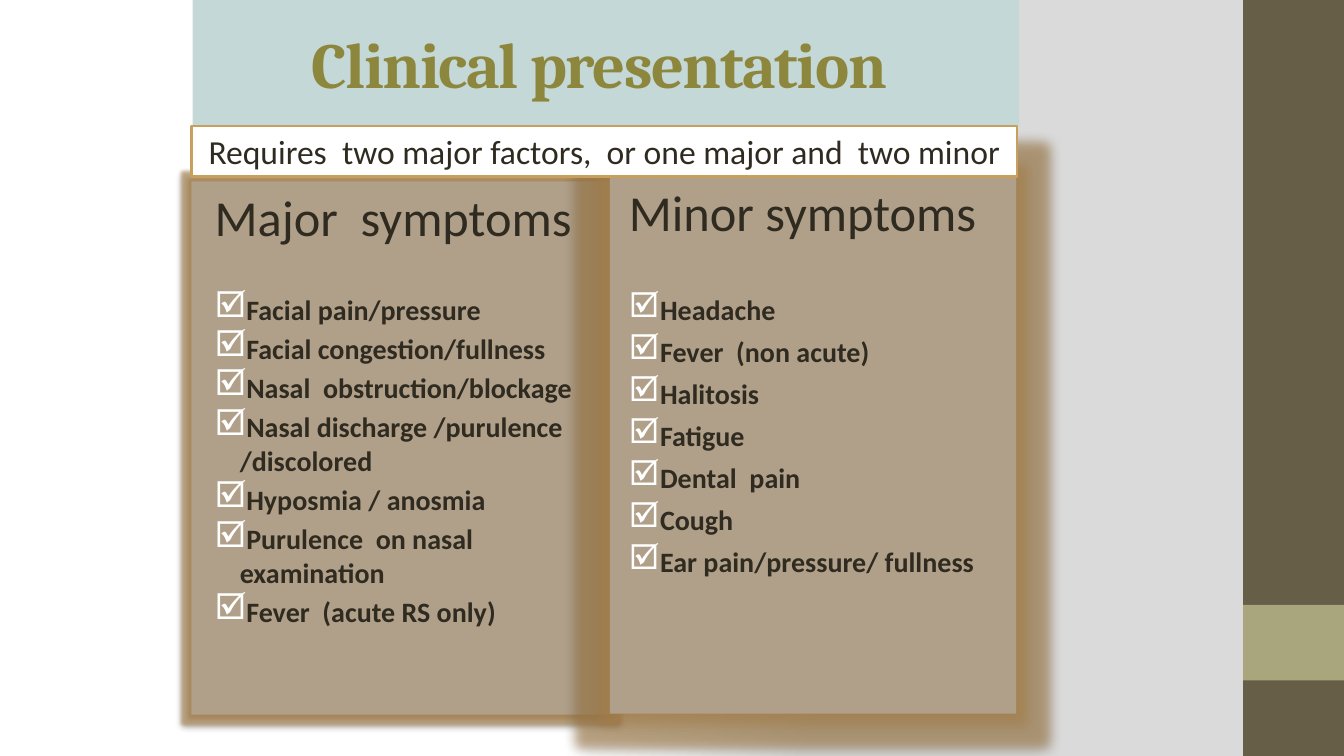
from dataclasses import dataclass

from lxml.etree import SubElement
from pptx import Presentation
from pptx.dml.color import RGBColor
from pptx.enum.shapes import MSO_SHAPE
from pptx.enum.text import MSO_ANCHOR, PP_ALIGN
from pptx.oxml import parse_xml
from pptx.oxml.ns import nsdecls, qn
from pptx.util import Pt


@dataclass(frozen=True)
class Theme:
    heading_font: str = "Cambria"
    body_font: str = "Calibri"
    title_size: int = 46
    panel_title_size: int = 36
    rule_size: int = 24
    item_size: int = 20
    title: str = "8D873E"
    text: str = "2F2B20"
    title_band: str = "C4D8D7"
    panel: str = "B1A089"
    rule_line: str = "C89F5D"
    glow: str = "A6804A"
    sidebar: str = "675E47"
    sidebar_accent: str = "A9A57C"
    white: str = "FFFFFF"
    backdrop: str = "DADADA"
    shadow: str = "000000"


THEME = Theme()
MAJOR = [
    "Facial pain/pressure",
    "Facial congestion/fullness",
    "Nasal  obstruction/blockage",
    "Nasal discharge /purulence /discolored",
    "Hyposmia / anosmia",
    "Purulence  on nasal  examination",
    "Fever  (acute RS only)",
]
MINOR = [
    "Headache",
    "Fever  (non acute)",
    "Halitosis",
    "Fatigue",
    "Dental  pain",
    "Cough",
    "Ear pain/pressure/ fullness",
]


def rgb(code):
    return RGBColor.from_string(code)


def style(paragraph, font_name, size, color, bold=False):
    font = paragraph.runs[0].font
    font.name, font.size, font.bold = font_name, Pt(size), bold
    font.color.rgb = rgb(color)


def set_background(slide):
    fill = slide.background.fill
    fill.solid()
    stops = [(0, THEME.white), (75, THEME.white), (100, THEME.backdrop)]
    stop_xml = "".join(
        f'<a:gs pos="{position * 1000}"><a:srgbClr val="{color}"/></a:gs>'
        for position, color in stops
    )
    gradient = parse_xml(
        f'<a:gradFill {nsdecls("a")} rotWithShape="1"><a:gsLst>{stop_xml}</a:gsLst>'
        '<a:path path="circle"><a:fillToRect l="20000" t="50000" r="100000" b="50000"/>'
        "</a:path></a:gradFill>"
    )
    solid = next(slide.element.iter(qn("a:solidFill")))
    solid.getparent().replace(solid, gradient)


def add_block(slide, left, top, width, height, color):
    block = slide.shapes.add_shape(
        MSO_SHAPE.RECTANGLE, Pt(left), Pt(top), Pt(width), Pt(height)
    )
    block.shadow.inherit = False
    block.fill.solid()
    block.fill.fore_color.rgb = rgb(color)
    block.line.fill.background()
    return block


def add_halo(panel, radius):
    effects = panel.element.spPr.find(qn("a:effectLst"))
    glow = SubElement(effects, qn("a:glow"), rad=str(Pt(radius)))
    shadow = SubElement(
        effects, qn("a:outerShdw"), blurRad=str(Pt(3.5)), dist=str(Pt(2.2)),
        dir="5400000", rotWithShape="0",
    )
    for effect, color, alpha in [(glow, THEME.glow, 60), (shadow, THEME.shadow, 32)]:
        shade = SubElement(effect, qn("a:srgbClr"), val=color)
        SubElement(shade, qn("a:alpha"), val=str(alpha * 1000))


def set_indent(paragraph, margin, indent):
    properties = paragraph._p.get_or_add_pPr()
    properties.set("marL", str(Pt(margin)))
    properties.set("indent", str(Pt(indent)))
    return properties


def add_checkbox(properties, percent):
    color = SubElement(properties, qn("a:buClr"))
    SubElement(color, qn("a:srgbClr"), val=THEME.white)
    SubElement(properties, qn("a:buSzPct"), val=str(percent * 1000))
    SubElement(properties, qn("a:buChar"), char="☑")


def add_title(slide, text):
    title = slide.shapes.title
    title.left, title.top, title.width, title.height = Pt(137.5), Pt(0), Pt(590.4), Pt(90)
    title.fill.solid()
    title.fill.fore_color.rgb = rgb(THEME.title_band)
    title.text_frame.text = text
    title.text_frame.vertical_anchor = MSO_ANCHOR.MIDDLE
    paragraph = title.text_frame.paragraphs[0]
    paragraph.alignment = PP_ALIGN.CENTER
    style(paragraph, THEME.heading_font, THEME.title_size, THEME.title, bold=True)
    paragraph.runs[0].font._element.set("spc", "-100")


def add_symptoms(slide, box, heading, symptoms, hanging, gap, checkbox, halo):
    panel = add_block(slide, *box, THEME.panel)
    add_halo(panel, halo)
    frame = panel.text_frame
    frame.word_wrap = True
    frame.vertical_anchor = MSO_ANCHOR.TOP
    frame.text = "\n".join([heading, *symptoms])
    title, *items = frame.paragraphs
    title.alignment = PP_ALIGN.LEFT
    set_indent(title, *hanging)
    style(title, THEME.body_font, THEME.panel_title_size, THEME.text)
    for item in items:
        item.alignment = PP_ALIGN.LEFT
        properties = set_indent(item, *hanging)
        item.space_before = Pt(gap)
        add_checkbox(properties, checkbox)
        style(item, THEME.body_font, THEME.item_size, THEME.text, bold=True)
    items[0].space_before = Pt(2 * gap + 1.22 * THEME.item_size)


def add_rule(slide, text):
    rule = add_block(slide, 136.8, 90, 589.7, 36, THEME.white)
    rule.line.color.rgb = rgb(THEME.rule_line)
    rule.line.width = Pt(2)
    rule.text_frame.word_wrap = True
    rule.text_frame.text = text
    paragraph = rule.text_frame.paragraphs[0]
    paragraph.alignment = PP_ALIGN.CENTER
    style(paragraph, THEME.body_font, THEME.rule_size, THEME.text)


def main():
    deck = Presentation()
    deck.slide_width, deck.slide_height = Pt(960), Pt(540)
    slide = deck.slides.add_slide(deck.slide_layouts[5])
    set_background(slide)
    add_block(slide, 888, 0, 72, 540, THEME.sidebar)
    add_block(slide, 888, 432, 72, 54, THEME.sidebar_accent)
    add_title(slide, "Clinical presentation ")
    add_symptoms(
        slide, (136.8, 129.6, 299.5, 380.9), "Major  symptoms", MAJOR,
        hanging=(27.4, -18), gap=4, checkbox=127, halo=5,
    )
    add_symptoms(
        slide, (435.6, 126, 290.2, 383.8), "Minor symptoms", MINOR,
        hanging=(28.8, -22.3), gap=6, checkbox=122, halo=16,
    )
    add_rule(slide, "Requires  two major factors,  or one major and  two minor")
    deck.save("out.pptx")


if __name__ == "__main__":
    main()
